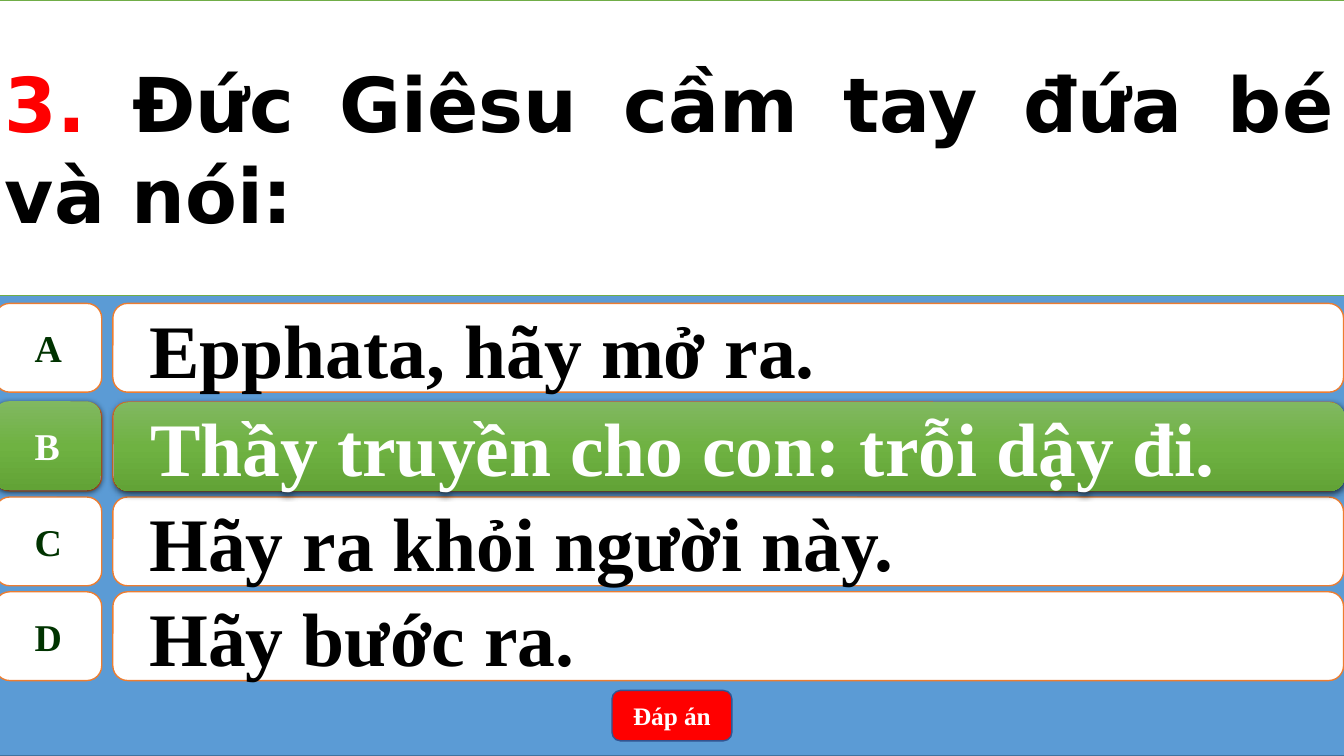
from lxml.etree import SubElement
from pptx import Presentation
from pptx.dml.color import RGBColor
from pptx.enum.shapes import MSO_SHAPE
from pptx.enum.text import MSO_ANCHOR, PP_ALIGN
from pptx.oxml.ns import qn
from pptx.util import Pt

QUESTION_NUMBER = "3. "
QUESTION = "Đức Giêsu cầm tay đứa bé và nói:"
ANSWERS = {
    "A": "Epphata, hãy mở ra.",
    "B": "Thầy truyền cho con: trỗi dậy đi.",
    "C": "Hãy ra khỏi người này.",
    "D": "Hãy bước ra.",
}
CORRECT = "B"
BUTTON = "Đáp án"

THEME = {
    "backdrop": "5B9BD5", "backdrop_line": "43739E",
    "panel": "FFFFFF", "panel_line": "70AD47", "answer_line": "ED7D31",
    "button": "FF0000", "button_line": "325491",
    "number": "FF0000", "letter": "003300", "text": "000000", "light": "FFFFFF",
    "correct": ((0, "81B861"), (50, "6FB242"), (100, "62A336")),
    "shadow": "000000",
    "font": "Times New Roman", "question_font": "DejaVu Sans",
    "big": 54, "letter_size": 27, "button_size": 18,
}

SLIDE_W, SLIDE_H = 960, 540
LEFT, FULL_W = -3.6, 964
QUESTION_H = 211
FIRST_TOP, ROW_H, ROW_PITCH = 216.7, 63.4, 67.7
FIRST_EXTRA_GAP = 2.9  # wider gap below the first answer
LETTER_W = 76.3
ANSWER_LEFT, ANSWER_W = 80.6, 879.1
LIFT = 0.7  # offset of the highlighted row


def add_box(shapes, preset, bounds, fill, line=None):
    box = shapes.add_shape(preset, *(Pt(length) for length in bounds))
    box.shadow.inherit = False
    if isinstance(fill, str):
        box.fill.solid()
        box.fill.fore_color.rgb = RGBColor.from_string(fill)
    else:
        fill_gradient(box, fill)
    if line:
        box.line.color.rgb = RGBColor.from_string(line)
        box.line.width = Pt(1)
    else:
        box.line.fill.background()
    return box


def fill_gradient(box, stops):
    """Fill from top to bottom with (percent, colour) stops."""
    box.fill.gradient()
    box.fill.gradient_angle = 270
    stop_list = box.element.spPr.find(qn("a:gradFill")).find(qn("a:gsLst"))
    for old_stop in list(stop_list):
        stop_list.remove(old_stop)
    for percent, color in stops:
        stop = SubElement(stop_list, qn("a:gs"), pos=str(percent * 1000))
        SubElement(stop, qn("a:srgbClr"), val=color)


def cast_shadow(box):
    effects = box.element.spPr.find(qn("a:effectLst"))
    shadow = SubElement(effects, qn("a:outerShdw"), blurRad=str(Pt(4.5)),
                        dist=str(Pt(1.5)), dir="5400000", algn="ctr", rotWithShape="0")
    color = SubElement(shadow, qn("a:srgbClr"), val=THEME["shadow"])
    SubElement(color, qn("a:alpha"), val="63000")


def write(box, runs, size, align, font=THEME["font"], wrap=True):
    """Write bold (text, colour) runs in one vertically centred paragraph."""
    frame = box.text_frame
    frame.word_wrap = wrap
    frame.vertical_anchor = MSO_ANCHOR.MIDDLE
    paragraph = frame.paragraphs[0]
    paragraph.alignment = align
    for text, color in runs:
        run = paragraph.add_run()
        run.text = text
        run.font.name = font
        run.font.size = Pt(size)
        run.font.bold = True
        run.font.color.rgb = RGBColor.from_string(color)
    return paragraph


def add_answer(slide, letter, top, correct=False):
    row = slide.shapes.add_group_shape().shapes
    fill = THEME["correct"] if correct else THEME["panel"]
    line = None if correct else THEME["answer_line"]
    shift = LIFT if correct else 0
    letter_box = add_box(row, MSO_SHAPE.FLOWCHART_ALTERNATE_PROCESS,
                         (LEFT - shift, top - shift, LETTER_W, ROW_H), fill, line)
    answer_box = add_box(row, MSO_SHAPE.ROUNDED_RECTANGLE,
                         (ANSWER_LEFT + shift, top, ANSWER_W, ROW_H), fill, line)
    if correct:
        cast_shadow(letter_box)
        cast_shadow(answer_box)
    letter_color = THEME["light"] if correct else THEME["letter"]
    text_color = THEME["light"] if correct else THEME["text"]
    write(letter_box, [(letter, letter_color)], THEME["letter_size"],
          PP_ALIGN.CENTER, wrap=False)
    answer = write(answer_box, [(ANSWERS[letter], text_color)], THEME["big"], PP_ALIGN.LEFT)
    answer.level = 1
    properties = answer._p.get_or_add_pPr()
    properties.set("marL", str(Pt(36)))
    properties.set("indent", str(Pt(-20)))


def main():
    deck = Presentation()
    deck.slide_width, deck.slide_height = Pt(SLIDE_W), Pt(SLIDE_H)
    slide = deck.slides.add_slide(deck.slide_layouts[6])

    add_box(slide.shapes, MSO_SHAPE.RECTANGLE, (LEFT, 0, FULL_W, SLIDE_H),
            THEME["backdrop"], THEME["backdrop_line"])

    tops = {letter: FIRST_TOP + index * ROW_PITCH + (FIRST_EXTRA_GAP if index else 0)
            for index, letter in enumerate(ANSWERS)}
    for letter, top in tops.items():
        add_answer(slide, letter, top)
    add_answer(slide, CORRECT, tops[CORRECT], correct=True)

    button = add_box(slide.shapes, MSO_SHAPE.ROUNDED_RECTANGLE, (437.2, 493.2, 85.6, 36),
                     THEME["button"], THEME["button_line"])
    write(button, [(BUTTON, THEME["light"])], THEME["button_size"], PP_ALIGN.CENTER)

    question = add_box(slide.shapes, MSO_SHAPE.RECTANGLE, (LEFT, 0, FULL_W, QUESTION_H),
                       THEME["panel"], THEME["panel_line"])
    write(question, [(QUESTION_NUMBER, THEME["number"]), (QUESTION, THEME["text"])],
          THEME["big"], PP_ALIGN.JUSTIFY, THEME["question_font"])

    deck.save("out.pptx")


if __name__ == "__main__":
    main()
